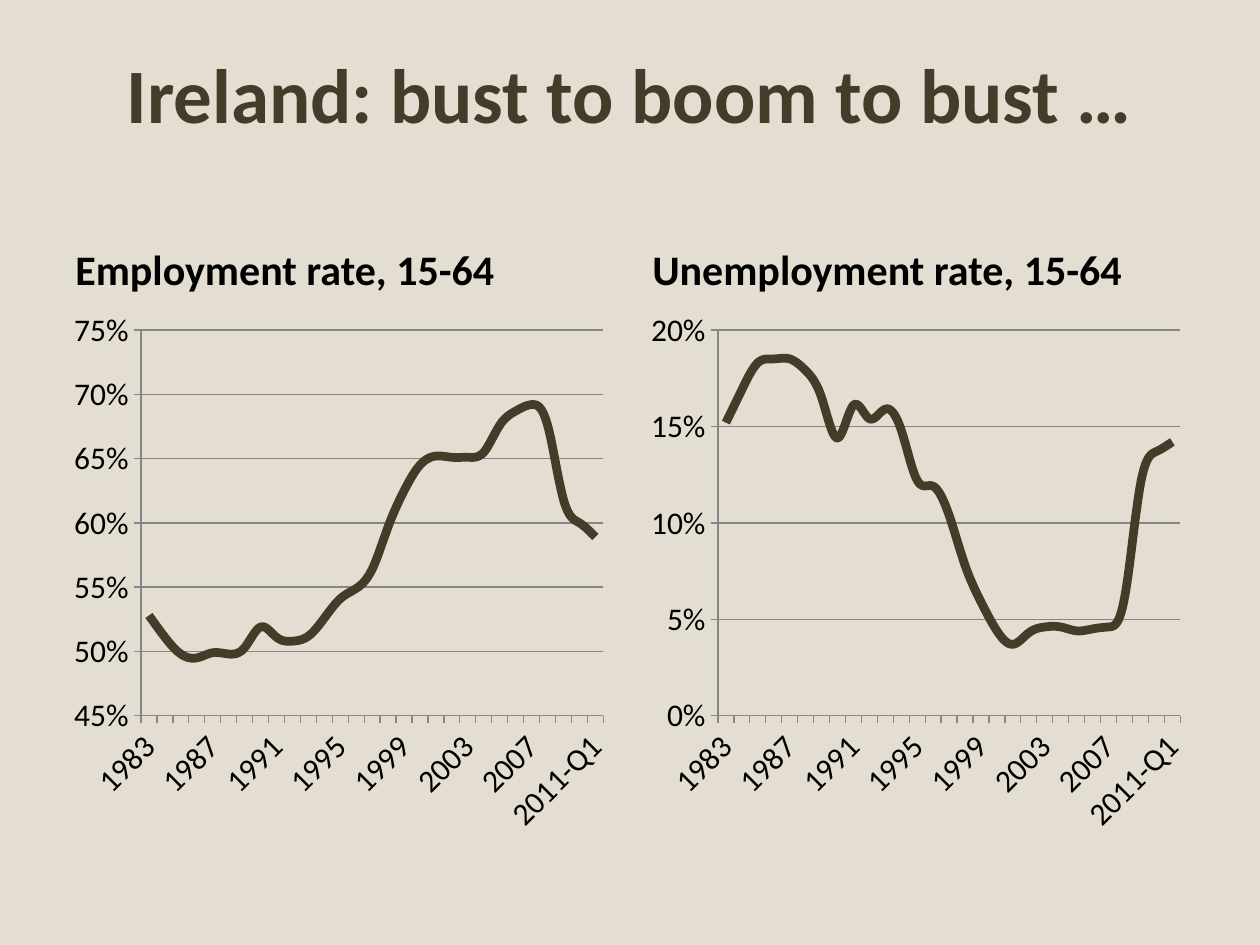
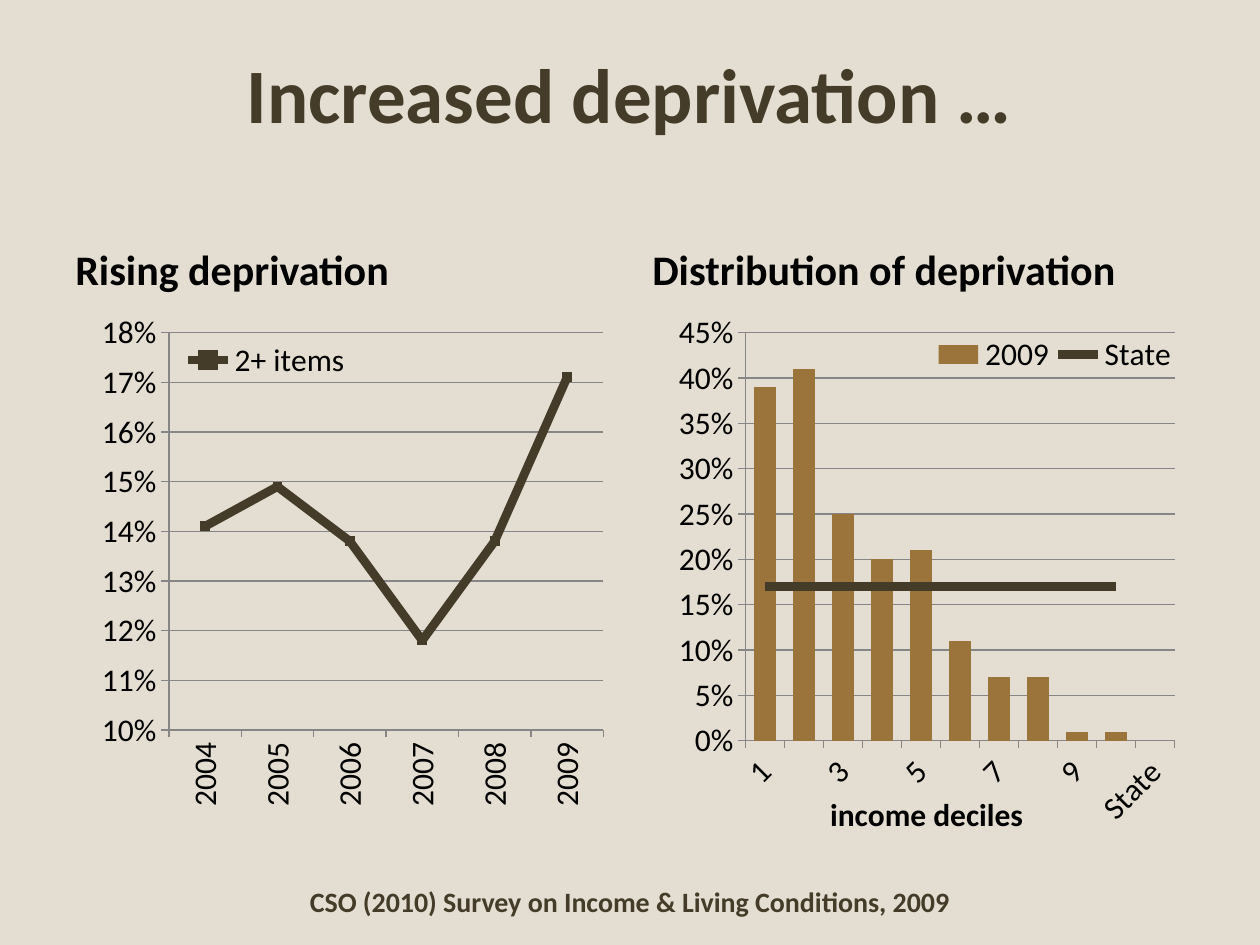
from dataclasses import dataclass
from typing import Any, Optional

from pptx import Presentation
from pptx.chart.data import CategoryChartData
from pptx.dml.color import RGBColor
from pptx.enum.chart import XL_CHART_TYPE as ChartType
from pptx.enum.chart import XL_LEGEND_POSITION as LegendPlace
from pptx.enum.chart import XL_MARKER_STYLE as MarkerStyle
from pptx.enum.chart import XL_TICK_MARK as TickMark
from pptx.enum.text import MSO_ANCHOR as Anchor
from pptx.enum.text import PP_ALIGN as Align
from pptx.oxml import parse_xml
from pptx.oxml.ns import nsdecls, qn
from pptx.util import Cm, Pt

SAND, BROWN, OCHRE, BLACK, GREY = "E3DED1", "443C29", "9A743A", "000000", "868686"
MARGIN, COLUMN_STEP, COLUMN_WIDTH = 1.27, 11.63, 11.23
FULL_WIDTH = 22.86
CHART_FONT = {"name": "Calibri", "size": Pt(18), "bold": False}
AXIS_TITLE_FONT = CHART_FONT | {"bold": True}
YEARS = [str(year) for year in range(1983, 2011)] + ["2011-Q1"]


@dataclass(frozen=True)
class TextStyle:
    """Place and look of one kind of text box, in centimetres and points."""
    top: float
    width: float
    height: float
    size: int
    colour: str
    align: Align
    anchor: Anchor


TITLE = TextStyle(0.76, FULL_WIDTH, 2.21, 44, BROWN, Align.CENTER, Anchor.MIDDLE)
HEADING = TextStyle(4.27, COLUMN_WIDTH, 1.78, 24, BLACK, Align.LEFT, Anchor.BOTTOM)
SOURCE = TextStyle(17.65, FULL_WIDTH, 1.02, 16, BROWN, Align.CENTER, Anchor.MIDDLE)


@dataclass(frozen=True)
class Panel:
    """A heading with its chart; layouts are fractions of the chart."""
    heading: str
    kind: ChartType
    categories: list[str]
    series: dict[str, list[Optional[float]]]
    minimum: Optional[float] = None
    major: Optional[float] = None
    smooth: bool = False
    label_angle: int = -45
    plot_layout: Optional[tuple[float, ...]] = None
    legend_layout: Optional[tuple[float, ...]] = None
    axis_title: str = ""


@dataclass(frozen=True)
class PageContent:
    """Everything that shows on one page."""
    title: str
    panels: list[Panel]
    source: str = ""


PAGES = [
    PageContent("Ireland: bust to boom to bust …", [
        Panel("Employment rate, 15-64", ChartType.LINE, YEARS, {"Series 1": [
            0.528, 0.511, 0.498, 0.495, 0.499, 0.498, 0.503, 0.519, 0.511, 0.508,
            0.512, 0.526, 0.541, 0.549, 0.564, 0.597, 0.625, 0.645, 0.652, 0.651,
            0.651, 0.655, 0.676, 0.687, 0.692, 0.676, 0.618, 0.6, 0.589]},
            minimum=0.45, smooth=True),
        Panel("Unemployment rate, 15-64", ChartType.LINE, YEARS, {"Series 1": [
            0.152, 0.169, 0.183, 0.185, 0.185, 0.179, 0.165, 0.144, 0.161, 0.154,
            0.159, 0.148, 0.122, 0.119, 0.104, 0.078, 0.059, 0.044, 0.037, 0.043,
            0.046, 0.046, 0.044, 0.045, 0.046, 0.061, 0.12, 0.137, 0.142]},
            minimum=0, major=0.05, smooth=True),
    ]),
    PageContent("Increased deprivation …", [
        Panel("Rising deprivation", ChartType.LINE_MARKERS,
              [str(year) for year in range(2004, 2010)],
              {"2+ items": [0.141, 0.149, 0.138, 0.118, 0.138, 0.171]},
              minimum=0.1, label_angle=-90,
              plot_layout=(0.19, 0.06, 0.78, 0.73),
              legend_layout=(0.21, 0.07, 0.31, 0.08)),
        Panel("Distribution of deprivation", ChartType.COLUMN_CLUSTERED,
              [str(decile) for decile in range(1, 11)] + ["State"],
              {"2009": [0.39, 0.41, 0.25, 0.2, 0.21, 0.11, 0.07, 0.07, 0.01, 0.01, None],
               "State": [0.17] * 10 + [None]},
              plot_layout=(0.19, 0.06, 0.77, 0.75),
              legend_layout=(0.52, 0.06, 0.45, 0.08), axis_title="income deciles"),
    ], "CSO (2010) Survey on Income & Living Conditions, 2009"),
]


def apply(target: Any, values: dict[str, Any]) -> None:
    """Set each named attribute on the target."""
    for name, value in values.items():
        setattr(target, name, value)


def paint(fill: Any, colour: str) -> None:
    """Make a fill solid in a hex colour."""
    fill.solid()
    fill.fore_color.rgb = RGBColor.from_string(colour)


def draw_line(line: Any, colour: str, width: float) -> None:
    """Give a line its colour and its width in points."""
    paint(line.fill, colour)
    line.width = Pt(width)


def set_font(font: Any, values: dict[str, Any], colour: str) -> None:
    """Apply font values and a colour."""
    apply(font, values)
    paint(font.fill, colour)


def add_text(page: Any, text: str, style: TextStyle, left: float = MARGIN) -> None:
    """Add a one-line text box in a shared style."""
    box = page.shapes.add_textbox(Cm(left), Cm(style.top), Cm(style.width), Cm(style.height))
    apply(box.text_frame, {"word_wrap": True, "vertical_anchor": style.anchor})
    para = box.text_frame.paragraphs[0]
    para.alignment = style.align
    span = para.add_run()
    span.text = text
    set_font(span.font, {"name": "Calibri", "size": Pt(style.size), "bold": True}, style.colour)


def manual_layout(fractions: tuple[float, ...], inner: bool = False) -> Any:
    """Build a chart layout element from left, top, width and height."""
    target = '<c:layoutTarget val="inner"/>' if inner else ""
    modes = "".join(f'<c:{axis}Mode val="edge"/>' for axis in "xy")
    sides = "".join(f'<c:{name} val="{value}"/>' for name, value in zip("xywh", fractions))
    return parse_xml(f'<c:layout {nsdecls("c")}><c:manualLayout>{target}{modes}{sides}'
                     "</c:manualLayout></c:layout>")


def remove_children(parent: Any, tag: str) -> None:
    """Remove every direct child with the tag."""
    for child in parent.findall(qn(tag)):
        parent.remove(child)


def style_axes(chart: Any, panel: Panel) -> None:
    """Format both axes and the gridlines."""
    value_axis, category_axis = chart.value_axis, chart.category_axis
    for axis in (category_axis, value_axis):
        apply(axis, {"major_tick_mark": TickMark.OUTSIDE, "minor_tick_mark": TickMark.NONE})
        set_font(axis.tick_labels.font, CHART_FONT, BLACK)
        draw_line(axis.format.line, GREY, 0.75)
    apply(value_axis, {"has_major_gridlines": True, "minimum_scale": panel.minimum,
                       "major_unit": panel.major})
    apply(value_axis.tick_labels, {"number_format": "0%", "number_format_is_linked": False})
    draw_line(value_axis.major_gridlines.format.line, GREY, 0.75)
    label_body = category_axis._element.find(qn("c:txPr")).find(qn("a:bodyPr"))
    label_body.set("rot", str(panel.label_angle * 60000))
    label_body.set("vert", "horz")
    if panel.axis_title:
        frame = category_axis.axis_title.text_frame
        frame.text = panel.axis_title
        set_font(frame.paragraphs[0].runs[0].font, AXIS_TITLE_FONT, BLACK)


def move_last_series_to_line(chart: Any) -> None:
    """Draw the last column series as a line on the same axes."""
    columns = chart.plots[0]._element
    series = columns.findall(qn("c:ser"))[-1]
    remove_children(series, "c:invertIfNegative")
    line_plot = parse_xml(f'<c:lineChart {nsdecls("c")}><c:grouping val="standard"/>'
                          '<c:varyColors val="0"/><c:marker val="1"/></c:lineChart>')
    line_plot.insert(2, series)
    for axis in columns.findall(qn("c:axId")):
        line_plot.append(parse_xml(f'<c:axId {nsdecls("c")} val="{axis.get("val")}"/>'))
    columns.addnext(line_plot)


def style_line_series(series: Any, panel: Panel) -> None:
    """Draw a thick brown line, with square markers where wanted."""
    draw_line(series.format.line, BROWN, 5)
    series.smooth = panel.smooth
    series.marker.style = MarkerStyle.NONE
    if panel.kind == ChartType.LINE_MARKERS:
        apply(series.marker, {"style": MarkerStyle.SQUARE, "size": 5})
        paint(series.marker.format.fill, BROWN)
        draw_line(series.marker.format.line, BROWN, 0.75)


def add_legend(chart: Any, fractions: tuple[float, ...]) -> None:
    """Lay the legend over the plot."""
    chart.has_legend = True
    apply(chart.legend, {"position": LegendPlace.TOP, "include_in_layout": True})
    set_font(chart.legend.font, CHART_FONT, BLACK)
    legend = chart.legend._element
    remove_children(legend, "c:layout")
    legend.find(qn("c:legendPos")).addnext(manual_layout(fractions))


def add_panel(page: Any, panel: Panel, left: float) -> None:
    """Add a heading and the chart under it."""
    add_text(page, panel.heading, HEADING, left)
    data = CategoryChartData(number_format="0%")
    data.categories = panel.categories
    for name, values in panel.series.items():
        data.add_series(name, values)
    chart = page.shapes.add_chart(panel.kind, Cm(left), Cm(6.05), Cm(COLUMN_WIDTH),
                                  Cm(10.97), data).chart
    apply(chart, {"has_title": False, "has_legend": False})
    set_font(chart.font, CHART_FONT, BLACK)
    style_axes(chart, panel)
    line_plot = chart.plots[0]
    line_plot.vary_by_categories = False
    if panel.kind == ChartType.COLUMN_CLUSTERED:
        chart.plots[0].gap_width = 75
        move_last_series_to_line(chart)
        paint(chart.plots[0].series[0].format.fill, OCHRE)
        line_plot = chart.plots[1]
    style_line_series(line_plot.series[0], panel)
    if panel.plot_layout:
        plot_area = chart._chartSpace.find(qn("c:chart")).find(qn("c:plotArea"))
        remove_children(plot_area, "c:layout")
        plot_area.insert(0, manual_layout(panel.plot_layout, inner=True))
    if panel.legend_layout:
        add_legend(chart, panel.legend_layout)


def main() -> None:
    """Build and save the deck."""
    deck = Presentation()
    apply(deck, {"slide_width": Cm(25.4), "slide_height": Cm(19.05)})
    paint(deck.slide_master.background.fill, SAND)
    for content in PAGES:
        page = deck.slides.add_slide(deck.slide_layouts[6])
        add_text(page, content.title, TITLE)
        for column, panel in enumerate(content.panels):
            add_panel(page, panel, MARGIN + column * COLUMN_STEP)
        if content.source:
            add_text(page, content.source, SOURCE)
    deck.save("out.pptx")


if __name__ == "__main__":
    main()
